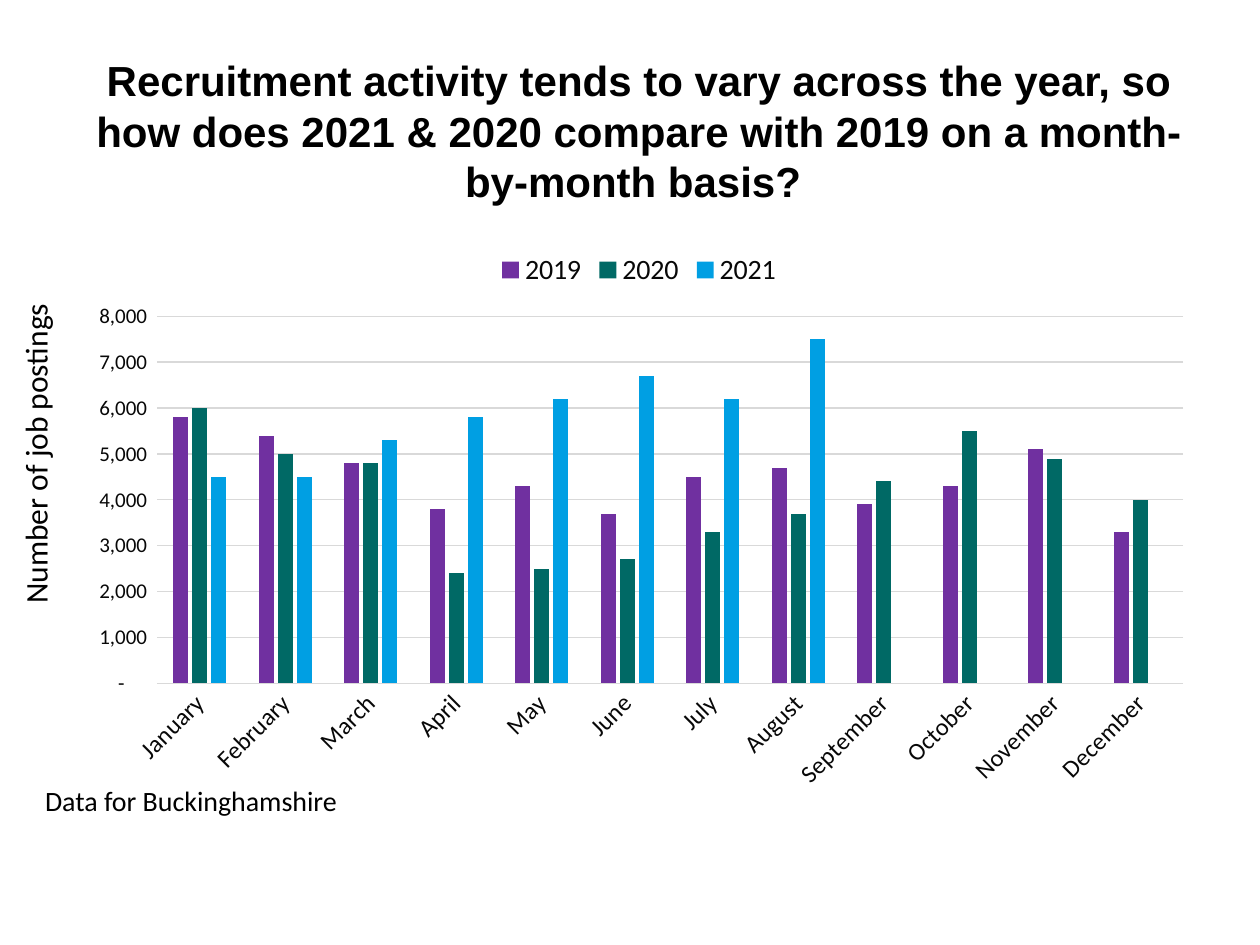
from pptx import Presentation
from pptx.chart.data import CategoryChartData
from pptx.dml.color import RGBColor
from pptx.enum.chart import XL_CHART_TYPE, XL_LEGEND_POSITION, XL_TICK_MARK
from pptx.enum.text import MSO_ANCHOR, PP_ALIGN
from pptx.util import Cm, Pt

CLUSTERED = XL_CHART_TYPE.COLUMN_CLUSTERED
LEGEND_TOP = XL_LEGEND_POSITION.TOP
NO_TICK = XL_TICK_MARK.NONE
CENTER = PP_ALIGN.CENTER
MIDDLE = MSO_ANCHOR.MIDDLE

BLACK = RGBColor(0x00, 0x00, 0x00)
CHART_TEXT = RGBColor(0x08, 0x08, 0x08)
GRID_GREY = RGBColor(0xD9, 0xD9, 0xD9)
PURPLE = RGBColor(0x70, 0x30, 0xA0)
GREEN = RGBColor(0x00, 0x69, 0x65)
BLUE = RGBColor(0x00, 0x9F, 0xE3)

MONTHS = ["January", "February", "March", "April", "May", "June", "July",
          "August", "September", "October", "November", "December"]
POSTINGS = [
    ("2019", PURPLE, [5800, 5400, 4800, 3800, 4300, 3700,
                      4500, 4700, 3900, 4300, 5100, 3300]),
    ("2020", GREEN, [6000, 5000, 4800, 2400, 2500, 2700,
                     3300, 3700, 4400, 5500, 4900, 4000]),
    ("2021", BLUE, [4500, 4500, 5300, 5800, 6200, 6700,
                    6200, 7500, None, None, None, None]),
]


def set_font(font, name, size, color, bold=False):
    font.name = name
    font.size = Pt(size)
    font.color.rgb = color
    font.bold = bold


presentation = Presentation()
presentation.slide_width = Cm(25.4)
presentation.slide_height = Cm(19.05)
slide = presentation.slides.add_slide(presentation.slide_layouts[5])

title = slide.shapes.title
title.left, title.top, title.width, title.height = Cm(1.45), Cm(1.04), Cm(22.86), Cm(3.18)
title.text_frame.text = ("Recruitment activity tends to vary across the year, so how does "
                         "2021 & 2020 compare with 2019 on a month-by-month basis? ")
title.text_frame.vertical_anchor = MIDDLE
title_paragraph = title.text_frame.paragraphs[0]
title_paragraph.alignment = CENTER
set_font(title_paragraph.font, "Arial", 24, BLACK, bold=True)

chart_data = CategoryChartData()
chart_data.categories = MONTHS
for year, color, values in POSTINGS:
    chart_data.add_series(year, values)
chart = slide.shapes.add_chart(CLUSTERED, Cm(1.45), Cm(4.8), Cm(22.86), Cm(11.33),
                               chart_data).chart
set_font(chart.font, "Calibri", 10, BLACK)
chart.has_title = False
chart.has_legend = True
chart.legend.position = LEGEND_TOP
chart.legend.include_in_layout = False
set_font(chart.legend.font, "Calibri", 16, CHART_TEXT)

plot = chart.plots[0]
plot.gap_width = 219
plot.overlap = -27
plot.vary_by_categories = False
for series, (year, color, values) in zip(plot.series, POSTINGS):
    series.format.fill.solid()
    series.format.fill.fore_color.rgb = color
    series.invert_if_negative = False

month_axis = chart.category_axis
value_axis = chart.value_axis
for axis, size in [(month_axis, 14), (value_axis, 12)]:
    axis.major_tick_mark = NO_TICK
    axis.minor_tick_mark = NO_TICK
    set_font(axis.tick_labels.font, "Calibri", size, CHART_TEXT)

month_axis.format.line.color.rgb = GRID_GREY
month_axis.format.line.width = Pt(0.75)
month_label_body = month_axis._element.txPr.bodyPr
month_label_body.set("rot", "-2700000")
month_label_body.set("vert", "horz")

value_axis.minimum_scale = 0
value_axis.maximum_scale = 8000
value_axis.major_unit = 1000
value_axis.format.line.fill.background()
value_axis.has_major_gridlines = True
value_axis.major_gridlines.format.line.color.rgb = GRID_GREY
value_axis.major_gridlines.format.line.width = Pt(0.75)
value_axis.tick_labels.number_format = '_-* #,##0_-;\\-* #,##0_-;_-* "-"??_-;_-@_-'
value_axis.tick_labels.number_format_is_linked = False

LABELS = [
    ("Data for Buckinghamshire", 16, "horz", 0.66, 15.67, 9.6, 0.94),
    ("Number of job postings", 18, "vert270", 0.2, 5.28, 1.27, 7.14),
]
for text, size, direction, left, top, width, height in LABELS:
    label = slide.shapes.add_textbox(Cm(left), Cm(top), Cm(width), Cm(height))
    label.text_frame.word_wrap = True
    label.text_frame.text = text
    label.text_frame._txBody.bodyPr.set("vert", direction)
    set_font(label.text_frame.paragraphs[0].font, "Calibri", size, BLACK)

presentation.save("out.pptx")
